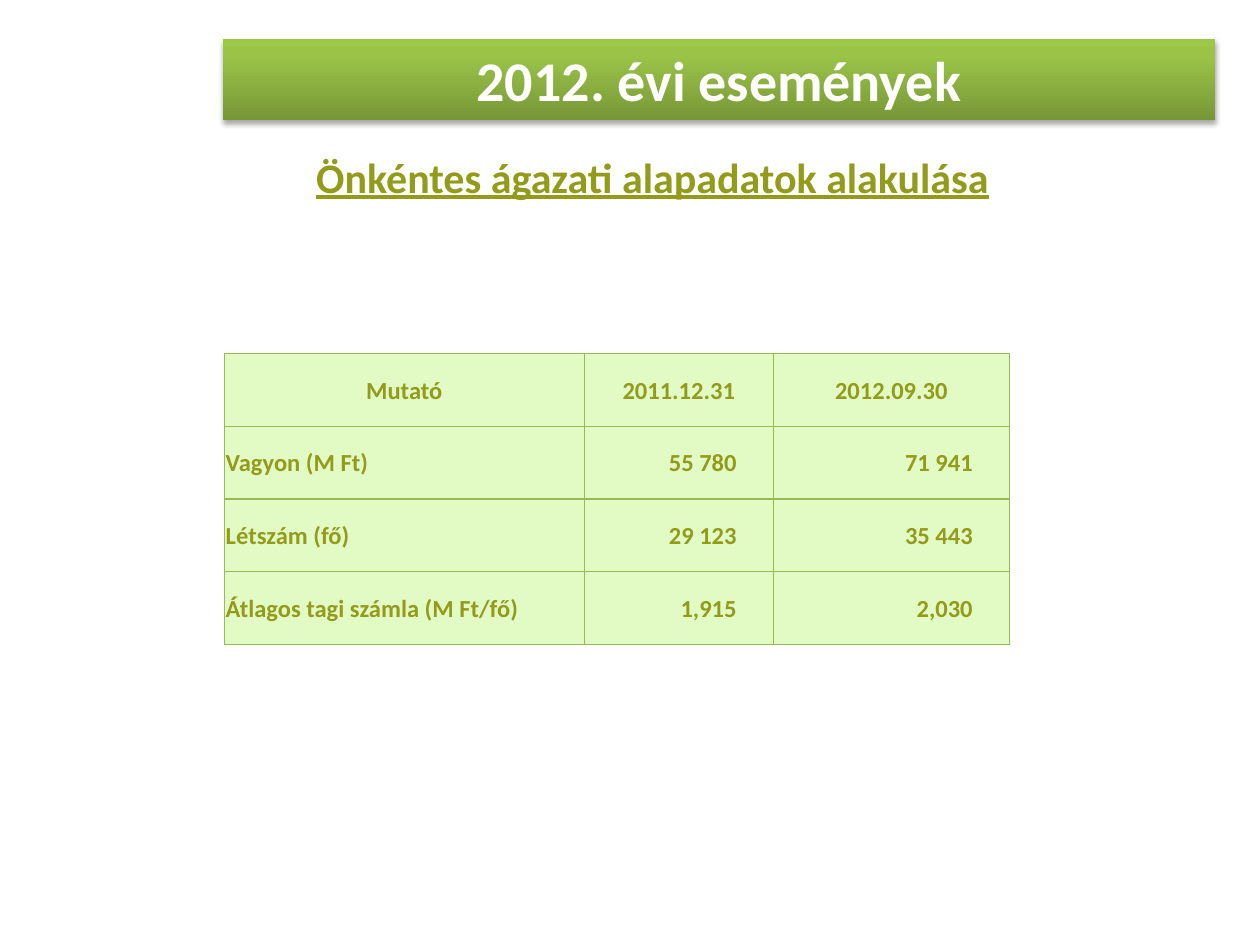
from lxml.etree import SubElement
from pptx import Presentation
from pptx.dml.color import RGBColor
from pptx.enum.text import MSO_ANCHOR as ANCHOR, PP_ALIGN as ALIGN
from pptx.oxml import parse_xml
from pptx.oxml.ns import nsdecls, qn
from pptx.util import Cm, Pt

TITLE = "2012. évi események"
SUBTITLE = "Önkéntes ágazati alapadatok alakulása"
ROWS = [
    ("Mutató", "2011.12.31", "2012.09.30"),
    ("Vagyon (M Ft)", "55 780", "71 941"),
    ("Létszám (fő)", "29 123", "35 443"),
    ("Átlagos tagi számla (M Ft/fő)", "1,915", "2,030"),
]
COL_WIDTHS = (7.26, 3.81, 4.76)
ROW_HEIGHT = 1.465

FONT = "Calibri"
OLIVE = RGBColor(0x93, 0x9B, 0x1B)
WHITE = RGBColor(0xFF, 0xFF, 0xFF)
CELL_FILL = RGBColor(0xE2, 0xFA, 0xC4)
BORDER = RGBColor(0x98, 0xB9, 0x55)
GRADIENT = (
    (0, RGBColor(0x77, 0x97, 0x37)),
    (80, RGBColor(0x9B, 0xC3, 0x48)),
    (100, RGBColor(0x9D, 0xC7, 0x46)),
)


def write(p, text, size, color, align, underline=None):
    p.alignment = align
    r = p.add_run()
    r.text = text
    font = r.font
    font.name, font.size, font.bold = FONT, Pt(size), True
    font.underline = underline
    font.color.rgb = color


def style_banner(sp):
    stops = "".join(
        f'<a:gs pos="{pos * 1000}"><a:srgbClr val="{color}"/></a:gs>'
        for pos, color in GRADIENT
    )
    sp._element.spPr.append(parse_xml(
        f'<a:gradFill {nsdecls("a")} rotWithShape="1"><a:gsLst>{stops}</a:gsLst>'
        '<a:lin ang="16200000" scaled="0"/></a:gradFill>'
    ))
    sp._element.spPr.append(parse_xml(
        f'<a:effectLst {nsdecls("a")}><a:outerShdw blurRad="{Pt(3.1)}" '
        f'dist="{Pt(1.8)}" dir="5400000" rotWithShape="0">'
        '<a:srgbClr val="000000"><a:alpha val="35000"/></a:srgbClr>'
        '</a:outerShdw></a:effectLst>'
    ))


def style_cell(cell):
    tc_pr = cell._tc.get_or_add_tcPr()
    for side in ("a:lnL", "a:lnR", "a:lnT", "a:lnB"):
        ln = SubElement(tc_pr, qn(side), w=str(Pt(0.75)))
        SubElement(SubElement(ln, qn("a:solidFill")), qn("a:srgbClr"), val=str(BORDER))
    cell.fill.solid()
    cell.fill.fore_color.rgb = CELL_FILL
    cell.vertical_anchor = ANCHOR.MIDDLE
    cell.margin_left = cell.margin_right = cell.margin_top = Cm(0.03)
    cell.margin_bottom = 0


def add_title(slide):
    sp = slide.shapes.title
    sp.left, sp.top, sp.width, sp.height = Cm(4.5), Cm(0.79), Cm(19.99), Cm(1.63)
    style_banner(sp)
    tf = sp.text_frame
    tf.vertical_anchor = ANCHOR.MIDDLE
    write(tf.paragraphs[0], TITLE, 32, WHITE, ALIGN.CENTER)


def add_subtitle(slide):
    sp = slide.shapes.add_textbox(Cm(1.09), Cm(2.92), Cm(22.86), Cm(14.4))
    tf = sp.text_frame
    tf.word_wrap = True
    tf.margin_left = Cm(1.52)
    write(tf.paragraphs[0], SUBTITLE, 24, OLIVE, ALIGN.CENTER, underline=True)


def add_figures(slide):
    table = slide.shapes.add_table(
        len(ROWS), len(COL_WIDTHS), Cm(4.52), Cm(7.13),
        Cm(sum(COL_WIDTHS)), Cm(ROW_HEIGHT * len(ROWS)),
    ).table
    table.first_row = table.horz_banding = False
    for col, width in zip(table.columns, COL_WIDTHS):
        col.width = Cm(width)
    for i, values in enumerate(ROWS):
        table.rows[i].height = Cm(ROW_HEIGHT)
        for j, value in enumerate(values):
            cell = table.cell(i, j)
            style_cell(cell)
            if i == 0:
                align = ALIGN.CENTER
            elif j == 0:
                align = ALIGN.LEFT
            else:
                align = ALIGN.RIGHT
                cell.margin_right = Cm(0.74)
            write(cell.text_frame.paragraphs[0], value, 14, OLIVE, align)


def main():
    prs = Presentation()
    prs.slide_width, prs.slide_height = Cm(25.4), Cm(19.05)
    slide = prs.slides.add_slide(prs.slide_layouts[5])
    add_title(slide)
    add_subtitle(slide)
    add_figures(slide)
    prs.save("out.pptx")


if __name__ == "__main__":
    main()
